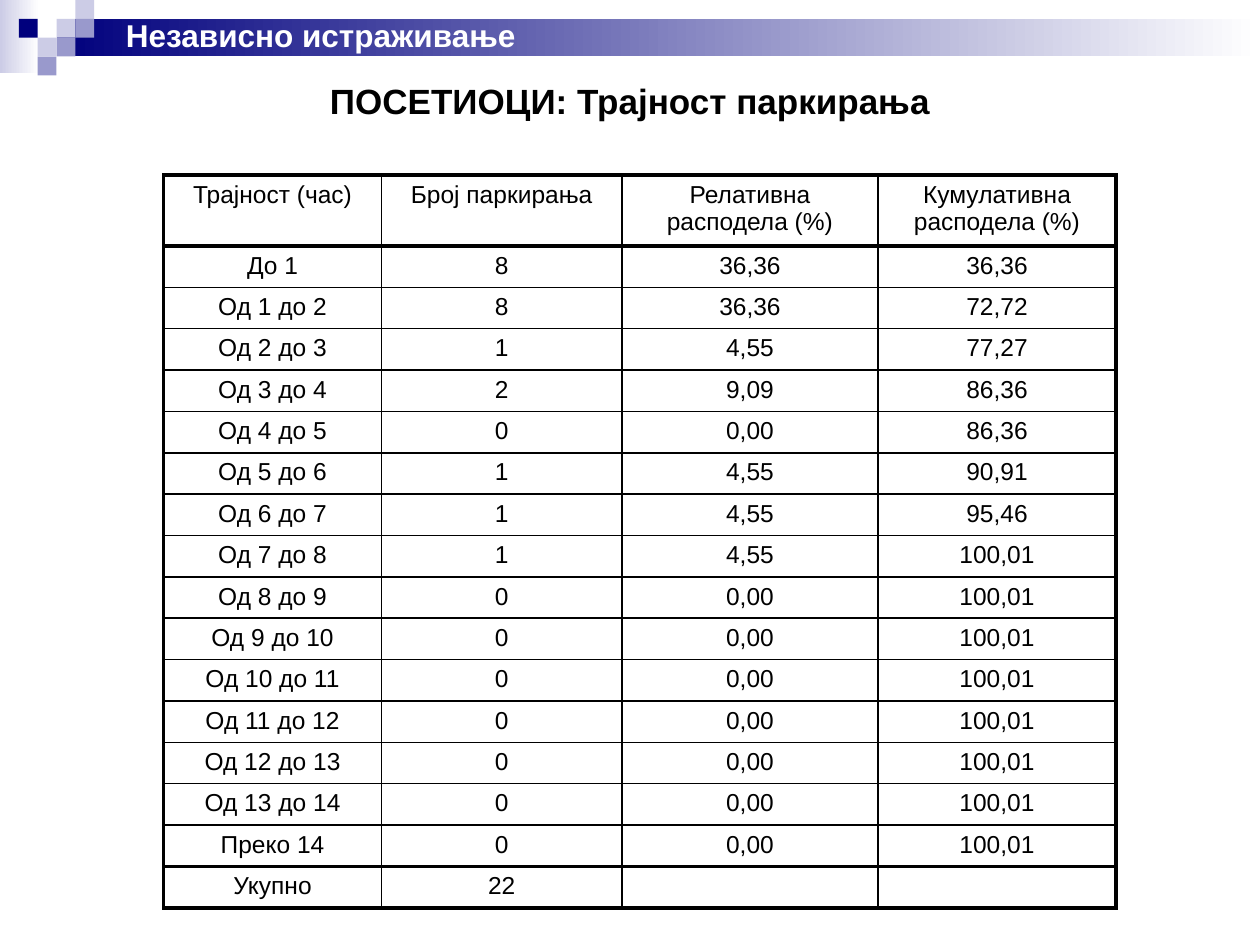
from typing import NamedTuple

from lxml import etree
from pptx import Presentation
from pptx.dml.color import RGBColor
from pptx.enum.shapes import MSO_SHAPE
from pptx.enum.text import MSO_ANCHOR, PP_ALIGN
from pptx.oxml.ns import qn
from pptx.util import Cm, Pt

RECT = MSO_SHAPE.RECTANGLE
LEFT, CENTER = PP_ALIGN.LEFT, PP_ALIGN.CENTER
TOP, MIDDLE = MSO_ANCHOR.TOP, MSO_ANCHOR.MIDDLE

COLORS = {
    "navy": "00007D",
    "violet": "9999CC",
    "lilac": "CCCCE6",
    "white": "FFFFFF",
    "black": "000000",
}
FONT = "Arial"
UNIT = 0.38  # side of a decorative square, cm
THIN, THICK = 1, 2.25  # table borders, pt
COL_WIDTHS = (4.39, 4.85, 5.16, 4.8)
HEADER_HEIGHT, ROW_HEIGHT = 1.38, 0.81

HEADERS = ("Трајност (час)", "Број паркирања",
           "Релативна расподела (%)", "Кумулативна расподела (%)")
DURATIONS = ["До 1", *(f"Од {n} до {n + 1}" for n in range(1, 14)), "Преко 14"]
COUNTS = (8, 8, 1, 2, 0, 1, 1, 1) + (0,) * 7
RELATIVE = {8: "36,36", 2: "9,09", 1: "4,55", 0: "0,00"}
CUMULATIVE = ("36,36", "72,72", "77,27", "86,36", "86,36", "90,91",
              "95,46") + ("100,01",) * 8


class Box(NamedTuple):
    left: float
    top: float
    width: float
    height: float


class Square(NamedTuple):
    col: int
    row: int
    color: str


SQUARES = (
    Square(3, 1, "lilac"), Square(4, 0, "lilac"), Square(4, 1, "violet"),
    Square(2, 2, "lilac"), Square(1, 1, "navy"), Square(3, 2, "violet"),
    Square(2, 3, "violet"),
)


def rgb(name: str) -> RGBColor:
    return RGBColor.from_string(COLORS[name])


def add_rect(s, box: Box, color: str, fade_to: str = ""):
    """Plain rectangle, or one fading from left to right."""
    sp = s.shapes.add_shape(RECT, *map(Cm, box))
    sp.shadow.inherit = False
    sp.line.fill.background()
    if fade_to:
        sp.fill.gradient()
        sp.fill.gradient_angle = 0
        for stop, name in zip(sp.fill.gradient_stops, (color, fade_to)):
            stop.color.rgb = rgb(name)
    else:
        sp.fill.solid()
        sp.fill.fore_color.rgb = rgb(color)


def write(tf, text: str, *, size: float, color: str = "black",
          bold: bool = False, align=CENTER) -> None:
    tf.word_wrap = True
    p = tf.paragraphs[0]
    p.alignment = align
    if not text:  # keeps an empty cell as low as its row
        p._p.get_or_add_endParaRPr().set("sz", str(int(size * 100)))
        return
    r = p.add_run()
    r.text = text
    r.font.name = FONT
    r.font.size = Pt(size)
    r.font.bold = bold
    r.font.color.rgb = rgb(color)


def add_text(s, box: Box, text: str, *, anchor=TOP, **style) -> None:
    tf = s.shapes.add_textbox(*map(Cm, box)).text_frame
    tf.vertical_anchor = anchor
    write(tf, text, **style)


def set_borders(cell, **widths: float) -> None:
    """Border widths in points, in the order lnL, lnR, lnT, lnB."""
    tc_pr = cell._tc.get_or_add_tcPr()
    for i, (tag, width) in enumerate(widths.items()):
        ln = etree.Element(qn(f"a:{tag}"), w=str(Pt(width)))
        fill = etree.SubElement(ln, qn("a:solidFill"))
        etree.SubElement(fill, qn("a:srgbClr"), val=COLORS["black"])
        tc_pr.insert(i, ln)


def add_duration_table(s, left: float, top: float) -> None:
    rows = [HEADERS]
    rows += [(d, str(n), RELATIVE[n], c)
             for d, n, c in zip(DURATIONS, COUNTS, CUMULATIVE)]
    rows.append(("Укупно", str(sum(COUNTS)), "", ""))
    heights = [HEADER_HEIGHT] + [ROW_HEIGHT] * (len(rows) - 1)
    box = Box(left, top, sum(COL_WIDTHS), sum(heights))
    table = s.shapes.add_table(len(rows), len(HEADERS), *map(Cm, box)).table
    table.first_row = table.horz_banding = False
    for col, width in zip(table.columns, COL_WIDTHS):
        col.width = Cm(width)
    for row, height in zip(table.rows, heights):
        row.height = Cm(height)

    # Thick lines frame the table, its header and its total
    thick_rows = {0, 1, len(rows) - 1, len(rows)}
    thick_cols = {0, len(HEADERS)}
    for i, values in enumerate(rows):
        for j, text in enumerate(values):
            cell = table.cell(i, j)
            cell.fill.background()
            cell.margin_top = cell.margin_bottom = Cm(0.12)
            write(cell.text_frame, text, size=14)
            set_borders(
                cell,
                lnL=THICK if j in thick_cols else THIN,
                lnR=THICK if j + 1 in thick_cols else THIN,
                lnT=THICK if i in thick_rows else THIN,
                lnB=THICK if i + 1 in thick_rows else THIN,
            )


def main() -> None:
    prs = Presentation()
    prs.slide_width, prs.slide_height = Cm(25.4), Cm(19.05)
    s = prs.slides.add_slide(prs.slide_layouts[6])

    # Header band with its squares
    add_rect(s, Box(0, 0, 0.79, 1.47), "lilac", "white")
    add_rect(s, Box(3 * UNIT, UNIT, 25.4 - 3 * UNIT, 2 * UNIT), "navy", "white")
    for sq in SQUARES:
        add_rect(s, Box(sq.col * UNIT, sq.row * UNIT, UNIT, UNIT), sq.color)

    # Title, table and section name
    add_text(s, Box(1.27, 1.3, 22.86, 1.45), "ПОСЕТИОЦИ: Трајност паркирања",
             anchor=MIDDLE, size=20, bold=True)
    add_duration_table(s, 3.3, 3.53)
    add_text(s, Box(2.29, 0.2, 14.2, 1.02), "Независно истраживање",
             size=18, color="white", bold=True, align=LEFT)

    prs.save("out.pptx")


if __name__ == "__main__":
    main()
